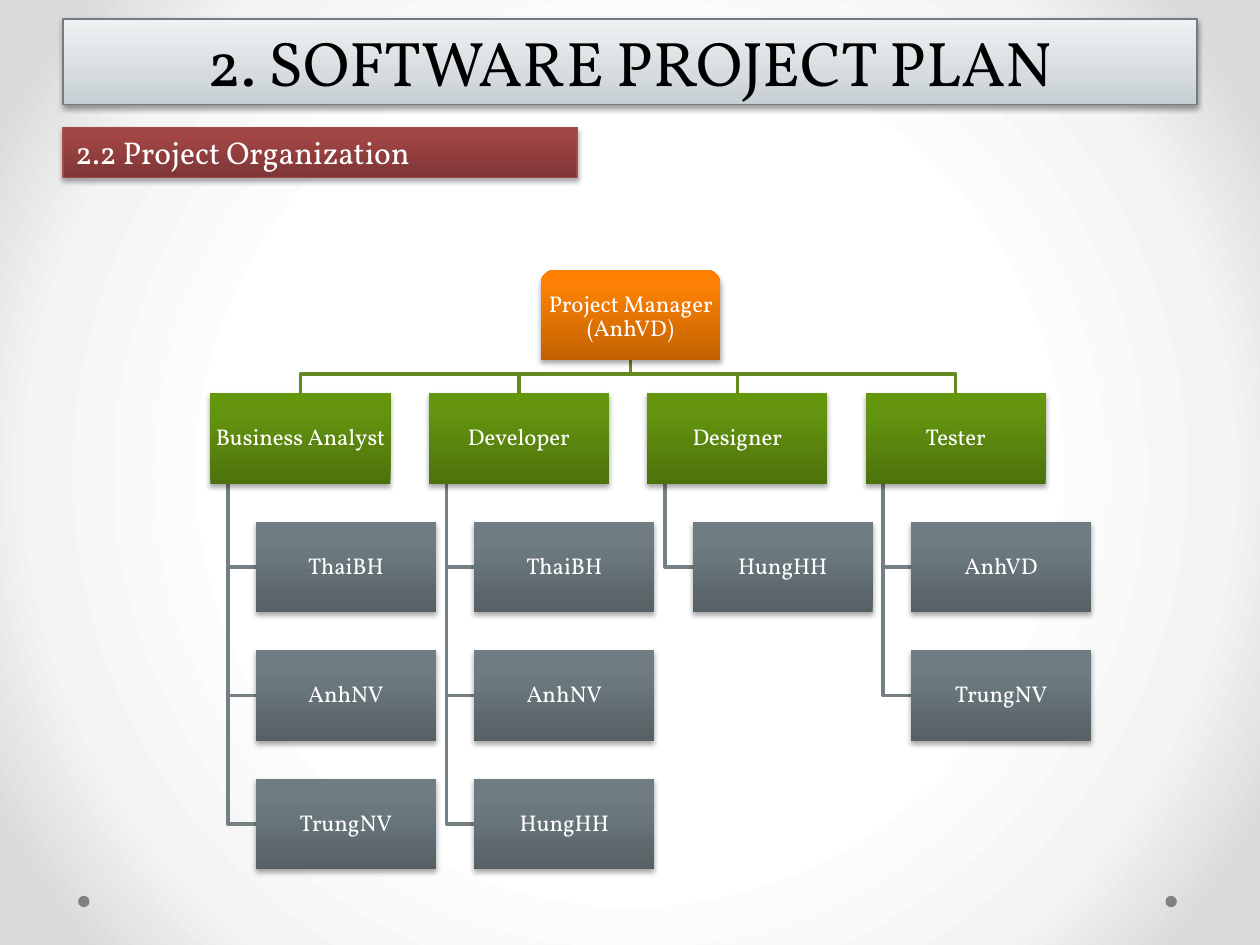
from lxml import etree
from pptx import Presentation
from pptx.dml.color import RGBColor
from pptx.enum.shapes import MSO_SHAPE
from pptx.enum.text import MSO_ANCHOR, MSO_AUTO_SIZE, PP_ALIGN
from pptx.oxml import parse_xml
from pptx.oxml.ns import nsdecls, qn
from pptx.util import Inches, Pt

RECTANGLE = MSO_SHAPE.RECTANGLE
ROUND_TOP = MSO_SHAPE.ROUND_2_SAME_RECTANGLE
OVAL = MSO_SHAPE.OVAL
LEFT, CENTER = PP_ALIGN.LEFT, PP_ALIGN.CENTER
TOP, MIDDLE = MSO_ANCHOR.TOP, MSO_ANCHOR.MIDDLE

FONT = "Vollkorn"
COLORS = {
    "white": "FFFFFF",
    "black": "000000",
    "dot": "808080",
    "role_line": "63891F",
    "member_line": "758085",
    "title_line": "727D82",
    "section_line": "9A4E4E",
}
GRADIENTS = {
    "background": {50: "FFFFFF", 76: "F4F4F4", 92: "DADADA"},
    "manager": {0: "C26203", 80: "FB8004", 100: "FF8002"},
    "role": {0: "4D720B", 80: "64940F", 100: "65970C"},
    "member": {0: "566065", 80: "6F7D83", 100: "6F7E84"},
    "title": {0: "C5CED2", 35: "D6DCDF", 100: "EFF2F3"},
    "section": {0: "7D3535", 80: "A24545", 100: "A44343"},
}
UPWARD = '<a:lin ang="16200000" scaled="0"/>'
RADIAL = ('<a:path path="circle"><a:fillToRect l="50000" t="50000" '
          'r="50000" b="50000"/></a:path>')

BOX_WIDTH, BOX_HEIGHT = 1.43, 0.72
MANAGER_LEFT, MANAGER_TOP = 4.29, 2.14
BUS_TOP = 2.97
ROLE_LEFT, LAST_ROLE_LEFT, ROLE_TOP = 1.67, 6.87, 3.12
ROW_STEP = 1.02
MEMBER_INDENT, STEM_INDENT = 0.36, 0.14
TEAMS = {
    "Business Analyst": ["ThaiBH", "AnhNV", "TrungNV"],
    "Developer": ["ThaiBH", "AnhNV", "HungHH"],
    "Designer": ["HungHH"],
    "Tester": ["AnhVD", "TrungNV"],
}


def rgb(name):
    """Return the named colour."""
    return RGBColor.from_string(COLORS[name])


def set_gradient(fill, element, name, direction=UPWARD):
    """Give the element that owns the fill a named gradient."""
    fill.background()
    stops = "".join(
        f'<a:gs pos="{position * 1000}"><a:srgbClr val="{color}"/></a:gs>'
        for position, color in GRADIENTS[name].items())
    gradient = parse_xml(f'<a:gradFill {nsdecls("a")} rotWithShape="1">'
                         f'<a:gsLst>{stops}</a:gsLst>{direction}</a:gradFill>')
    empty_fill = next(element.iter(qn("a:noFill")))
    empty_fill.getparent().replace(empty_fill, gradient)


def set_shadow(shape, opacity=35, distance=1.8):
    """Give a shape a soft shadow that falls straight down."""
    shape.shadow.inherit = False
    effects = next(shape.element.iter(qn("a:effectLst")))
    shadow = etree.SubElement(
        effects, qn("a:outerShdw"), blurRad=str(Pt(3.1)),
        dist=str(Pt(distance)), dir="5400000", rotWithShape="0")
    color = etree.SubElement(shadow, qn("a:srgbClr"), val=COLORS["black"])
    etree.SubElement(color, qn("a:alpha"), val=str(opacity * 1000))


def add_text(shape, text, size, color="white", alignment=CENTER):
    """Write one line of text into a shape."""
    paragraph = shape.text_frame.paragraphs[0]
    paragraph.alignment = alignment
    run = paragraph.add_run()
    run.text = text
    run.font.name = FONT
    run.font.size = Pt(size)
    run.font.color.rgb = rgb(color)
    return paragraph


def add_panel(slide, kind, left, top, width, height, gradient, line=None):
    """Add a gradient panel with an optional thin outline."""
    shape = slide.shapes.add_shape(
        kind, Inches(left), Inches(top), Inches(width), Inches(height))
    set_gradient(shape.fill, shape.element, gradient)
    if line:
        shape.line.color.rgb = rgb(line)
        shape.line.width = Pt(0.75)
    else:
        shape.line.fill.background()
    return shape


def add_box(slide, text, left, top, gradient, kind=RECTANGLE):
    """Add one box of the organization chart."""
    shape = add_panel(slide, kind, left, top, BOX_WIDTH, BOX_HEIGHT, gradient)
    set_shadow(shape)
    frame = shape.text_frame
    frame.word_wrap = True
    frame.vertical_anchor = MIDDLE
    frame.margin_left = frame.margin_right = Inches(0.01)
    frame.margin_top = frame.margin_bottom = Inches(0.01)
    add_text(shape, text, 13).line_spacing = 0.9


def add_branch(slide, points, color):
    """Draw an open line with square corners through the points."""
    start, *others = [(Inches(x), Inches(y)) for x, y in points]
    builder = slide.shapes.build_freeform(*start)
    builder.add_line_segments(others, close=False)
    shape = builder.convert_to_shape()
    shape.fill.background()
    shape.line.color.rgb = rgb(color)
    shape.line.width = Pt(2)
    shape.shadow.inherit = False


def add_dot(slide, left):
    """Add a small dot at the foot of the slide."""
    dot = slide.shapes.add_shape(
        OVAL, Inches(left), Inches(7.11), Inches(0.09), Inches(0.09))
    dot.fill.solid()
    dot.fill.fore_color.rgb = rgb("dot")
    dot.line.fill.background()
    dot.shadow.inherit = False


def add_organization(slide):
    """Add the chart, with its branches behind its boxes."""
    step = (LAST_ROLE_LEFT - ROLE_LEFT) / (len(TEAMS) - 1)
    manager_center = MANAGER_LEFT + BOX_WIDTH / 2
    boxes = [("Project Manager (AnhVD)", MANAGER_LEFT, MANAGER_TOP,
              "manager", ROUND_TOP)]
    for column, (role, members) in enumerate(TEAMS.items()):
        left = ROLE_LEFT + column * step
        center, stem = left + BOX_WIDTH / 2, left + STEM_INDENT
        add_branch(slide, [(manager_center, MANAGER_TOP + BOX_HEIGHT),
                           (manager_center, BUS_TOP), (center, BUS_TOP),
                           (center, ROLE_TOP)], "role_line")
        boxes.append((role, left, ROLE_TOP, "role"))
        for row, member in enumerate(members, start=1):
            top = ROLE_TOP + row * ROW_STEP
            middle = top + BOX_HEIGHT / 2
            member_left = left + MEMBER_INDENT
            add_branch(slide, [(stem, ROLE_TOP + BOX_HEIGHT), (stem, middle),
                               (member_left, middle)], "member_line")
            boxes.append((member, member_left, top, "member"))
    for box in boxes:
        add_box(slide, *box)


def add_headings(slide):
    """Add the slide title and the section heading."""
    title = add_panel(slide, RECTANGLE, 0.5, 0.15, 9, 0.68,
                      "title", "title_line")
    set_shadow(title, 38, 1.6)
    title.text_frame.vertical_anchor = MIDDLE
    add_text(title, "2. SOFTWARE PROJECT PLAN", 36, "black")
    section = add_panel(slide, RECTANGLE, 0.5, 1.01, 4.08, 0.4,
                        "section", "section_line")
    set_shadow(section)
    section.text_frame.vertical_anchor = TOP
    section.text_frame.auto_size = MSO_AUTO_SIZE.SHAPE_TO_FIT_TEXT
    add_text(section, "2.2 Project Organization", 18, alignment=LEFT)


def main():
    """Build and save the slide."""
    presentation = Presentation()
    presentation.slide_width = Inches(10)
    presentation.slide_height = Inches(7.5)
    slide = presentation.slides.add_slide(presentation.slide_layouts[6])
    set_gradient(slide.background.fill, slide.element, "background", RADIAL)
    for left in (9.25, 0.62):
        add_dot(slide, left)
    add_organization(slide)
    add_headings(slide)
    presentation.save("out.pptx")


if __name__ == "__main__":
    main()
